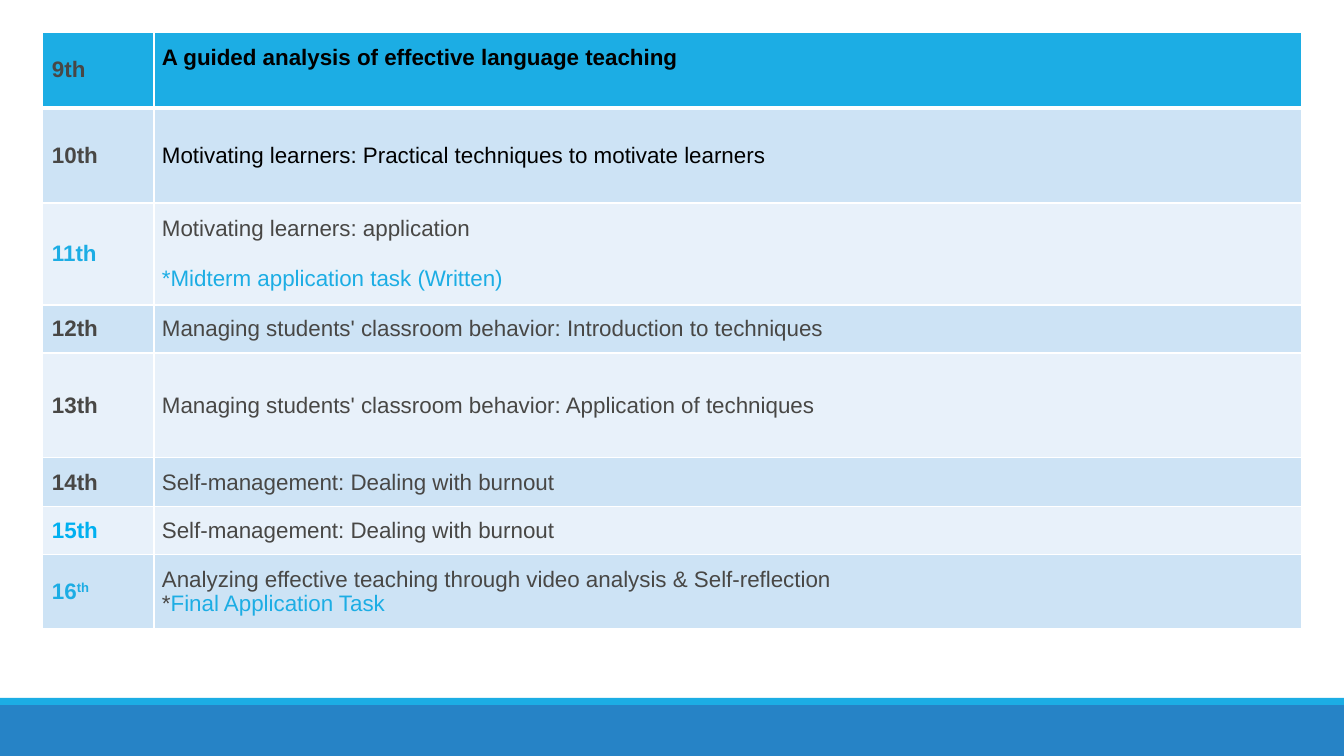
import pptx
import pptx.dml.color
import pptx.enum.shapes
import pptx.enum.text
import pptx.oxml
import pptx.oxml.ns
import pptx.util

RGBColor = pptx.dml.color.RGBColor
SKY = RGBColor(0x1C, 0xAD, 0xE4)
BLUE = RGBColor(0x26, 0x83, 0xC6)
BRIGHT = RGBColor(0x00, 0xB0, 0xF0)
BAND_DARK = RGBColor(0xCD, 0xE3, 0xF5)
BAND_LIGHT = RGBColor(0xE8, 0xF1, 0xFA)
GREY = RGBColor(0x48, 0x47, 0x45)
BLACK = RGBColor(0, 0, 0)
WHITE = RGBColor(0xFF, 0xFF, 0xFF)

WEEKS = [
    (76, [("9th", GREY)],
     [[("A guided analysis of effective language teaching", BLACK)]]),
    (95, [("10th", GREY)],
     [[("Motivating learners: Practical techniques to motivate learners", BLACK)]]),
    (102, [("11th", SKY)],
     [[("Motivating learners: application", GREY)],
      [("*Midterm application task (Written)", SKY)]]),
    (48, [("12th", GREY)],
     [[("Managing students' classroom behavior: Introduction to techniques", GREY)]]),
    (105, [("13th", GREY)],
     [[("Managing students' classroom behavior: Application of techniques", GREY)]]),
    (49, [("14th", GREY)], [[("Self-management: Dealing with burnout", GREY)]]),
    (48, [("15th", BRIGHT)], [[("Self-management: Dealing with burnout", GREY)]]),
    (74, [("16", SKY), ("th", SKY)],
     [[("Analyzing effective teaching through video analysis & Self-reflection", GREY)],
      [("*", GREY), ("Final Application Task", SKY)]]),
]
FOOTER_BARS = [(705, 51, BLUE), (698, 7, SKY)]
COLUMNS = [112, 1148]
INSETS = [10, 8]
TABLE_LEFT, TABLE_TOP = 42, 32
PAGE_WIDTH, PAGE_HEIGHT = 1344, 756
HEADER_ROW, MIDTERM_ROW = 0, 2
HEADER_LIFT = 25


def px(length):
    return pptx.util.Emu(round(length * 914400 / 100.8))


def set_borders(cell, row):
    points = {"L": 1, "R": 1, "T": 3 if row == 1 else 1, "B": 3 if row == 0 else 1}
    properties = cell._tc.get_or_add_tcPr()
    for position, (side, width) in enumerate(points.items()):
        border = pptx.oxml.parse_xml(
            f'<a:ln{side} {pptx.oxml.ns.nsdecls("a")} w="{pptx.util.Pt(width)}">'
            f'<a:solidFill><a:srgbClr val="{WHITE}"/></a:solidFill></a:ln{side}>')
        properties.insert(position, border)


def fill_cell(cell, lines, row, column):
    cell.vertical_anchor = pptx.enum.text.MSO_ANCHOR.MIDDLE
    cell.margin_left = cell.margin_right = px(INSETS[column])
    cell.margin_top = cell.margin_bottom = px(6)
    cell.fill.solid()
    band = BAND_DARK if row % 2 else BAND_LIGHT
    cell.fill.fore_color.rgb = SKY if row == HEADER_ROW else band
    set_borders(cell, row)
    frame = cell.text_frame
    for number, spans in enumerate(lines):
        para = frame.add_paragraph() if number else frame.paragraphs[0]
        para.font.name = "Arial"
        para.font.size = pptx.util.Pt(16)
        para.font.bold = column == 0 or row == HEADER_ROW
        if row == MIDTERM_ROW and number:
            para.space_before = pptx.util.Pt(18)
        for text, color in spans:
            span = para.add_run()
            span.text = text
            span.font.color.rgb = color
            if text == "th":
                span._r.get_or_add_rPr().set("baseline", "30000")


def add_footer(page):
    for top, height, color in FOOTER_BARS:
        bar = page.shapes.add_shape(
            pptx.enum.shapes.MSO_SHAPE.RECTANGLE, 0, px(top), px(PAGE_WIDTH), px(height))
        bar.shadow.inherit = False
        bar.fill.solid()
        bar.fill.fore_color.rgb = color
        bar.line.fill.background()


def add_schedule(page):
    total = sum(height for height, _, _ in WEEKS)
    schedule = page.shapes.add_table(
        len(WEEKS), len(COLUMNS), px(TABLE_LEFT), px(TABLE_TOP),
        px(sum(COLUMNS)), px(total)).table
    for column, width in enumerate(COLUMNS):
        schedule.columns[column].width = px(width)
    for row, (height, week, topic) in enumerate(WEEKS):
        schedule.rows[row].height = px(height)
        for column, lines in enumerate([[week], topic]):
            fill_cell(schedule.cell(row, column), lines, row, column)
    schedule.cell(HEADER_ROW, 1).margin_bottom = px(6 + HEADER_LIFT)


def main():
    deck = pptx.Presentation()
    deck.slide_width, deck.slide_height = px(PAGE_WIDTH), px(PAGE_HEIGHT)
    page = deck.slides.add_slide(deck.slide_layouts[6])
    add_footer(page)
    add_schedule(page)
    deck.save("out.pptx")


if __name__ == "__main__":
    main()
